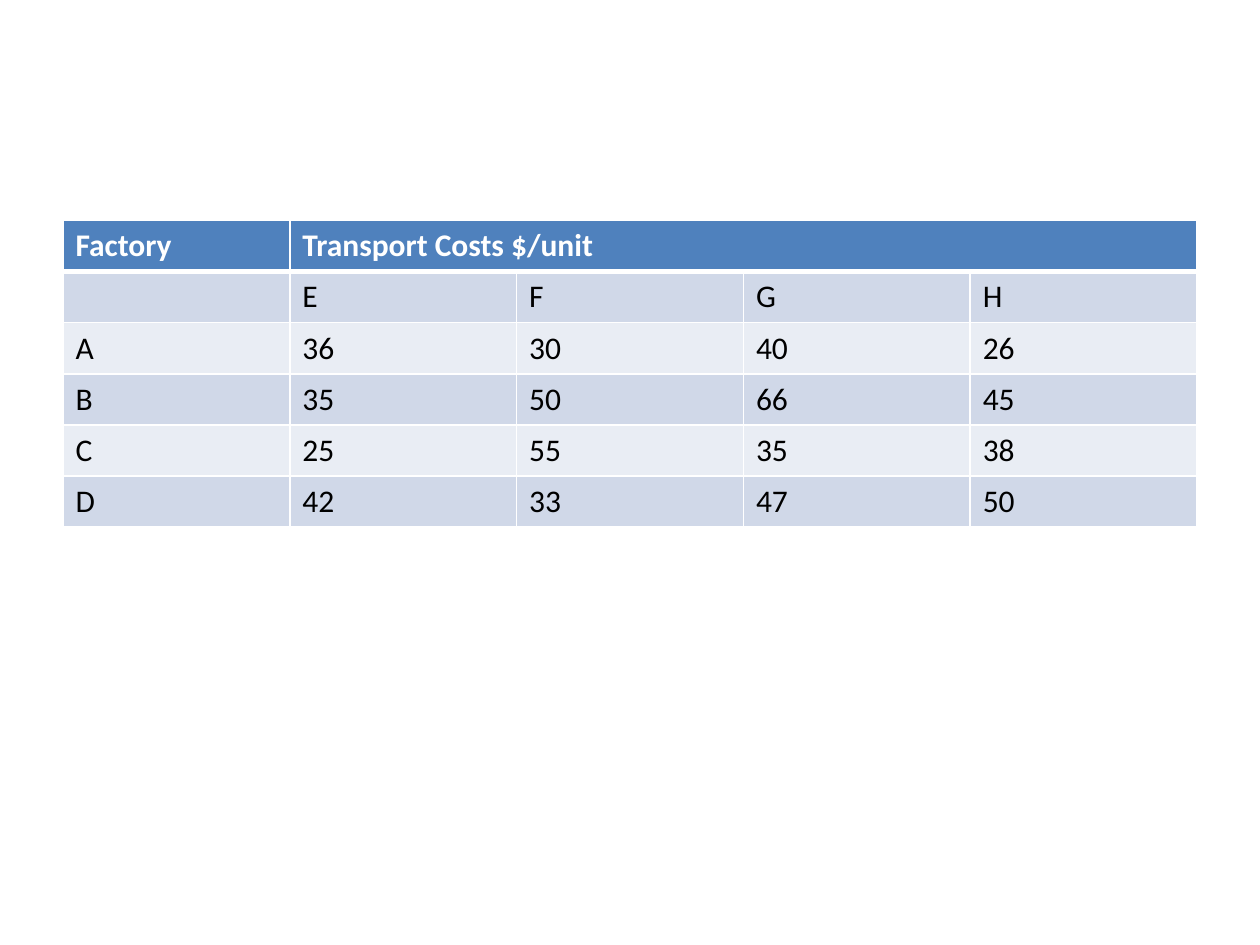
from lxml import etree
from pptx import Presentation
from pptx.dml.color import RGBColor
from pptx.oxml.ns import qn
from pptx.util import Pt

WHITE, BLACK = "FFFFFF", "000000"
HEADER, BAND_DARK, BAND_LIGHT = "4F81BD", "D0D8E8", "E9EDF4"

COSTS = [
    ["Factory", "Transport Costs $/unit", "", "", ""],
    ["", "E", "F", "G", "H"],
    ["A", "36", "30", "40", "26"],
    ["B", "35", "50", "66", "45"],
    ["C", "25", "55", "35", "38"],
    ["D", "42", "33", "47", "50"],
]


def rgb(value):
    return RGBColor.from_string(value)


class Deck:
    """Holds the table style and the current slide."""

    body_font = {"name": "Calibri", "size": Pt(18), "bold": False}
    header_font = {**body_font, "bold": True}
    thin, thick = 1, 3

    def __init__(self, prs):
        self.s = prs.slides.add_slide(prs.slide_layouts[6])

    def border(self, cell, side, width):
        ln = etree.SubElement(cell._tc.get_or_add_tcPr(), qn(f"a:ln{side}"), w=str(Pt(width)))
        fill = etree.SubElement(ln, qn("a:solidFill"))
        etree.SubElement(fill, qn("a:srgbClr"), val=WHITE)

    def cell(self, cell, text, row):
        widths = {"L": self.thin, "R": self.thin,
                  "T": self.thick if row == 1 else self.thin,
                  "B": self.thick if row == 0 else self.thin}
        for side, width in widths.items():
            self.border(cell, side, width)
        cell.fill.solid()
        band = BAND_DARK if row % 2 else BAND_LIGHT
        cell.fill.fore_color.rgb = rgb(HEADER if row == 0 else band)
        if not text:
            return
        r = cell.text_frame.paragraphs[0].add_run()
        r.text = text
        for name, value in (self.body_font if row else self.header_font).items():
            setattr(r.font, name, value)
        r.font.color.rgb = rgb(BLACK if row else WHITE)

    def table(self, rows, left, top, col_width, row_height):
        n_rows, n_cols = len(rows), len(rows[0])
        table = self.s.shapes.add_table(
            n_rows, n_cols, Pt(left), Pt(top),
            Pt(col_width * n_cols), Pt(row_height * n_rows)).table
        for i, row in enumerate(rows):
            for j, text in enumerate(row):
                self.cell(table.cell(i, j), text, i)
        return table


def main():
    prs = Presentation()
    prs.slide_width, prs.slide_height = Pt(720), Pt(540)
    deck = Deck(prs)
    table = deck.table(COSTS, left=36, top=126, col_width=129.6, row_height=29.2)
    table.cell(0, 1).merge(table.cell(0, 4))
    prs.save("out.pptx")


if __name__ == "__main__":
    main()
